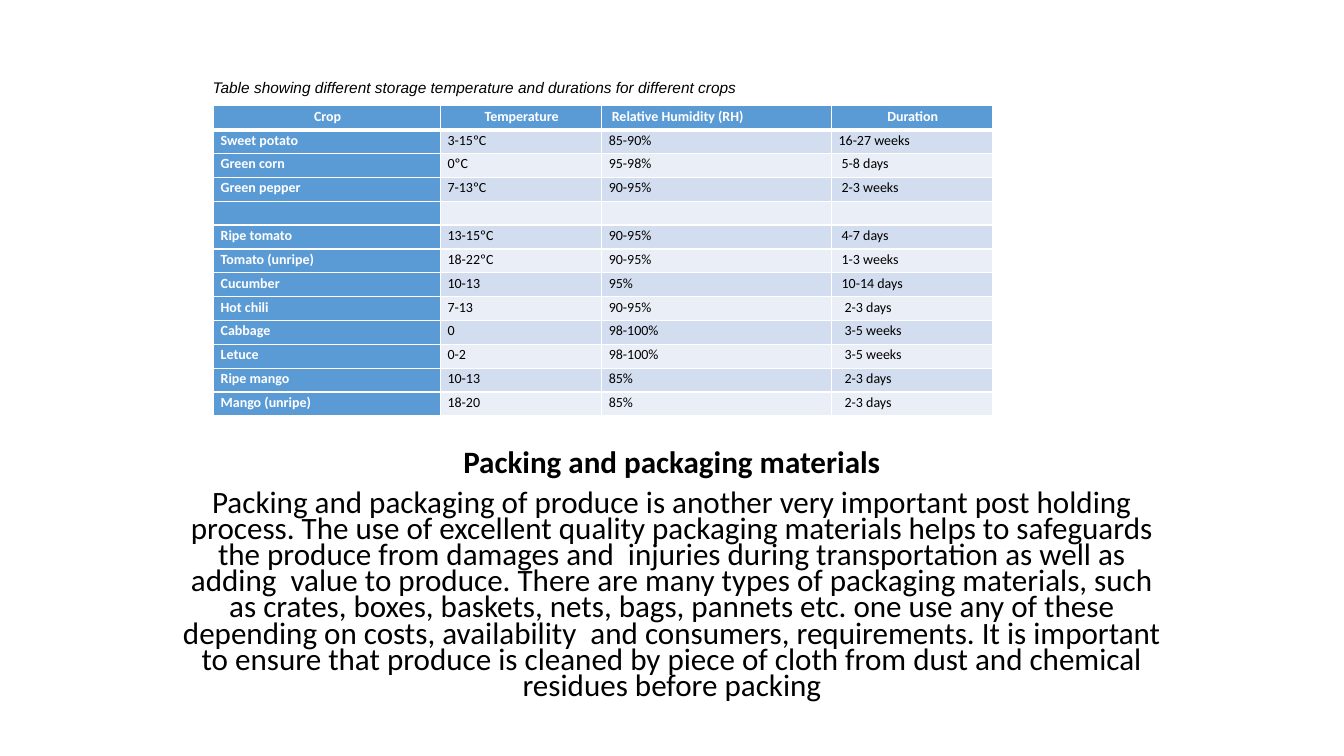
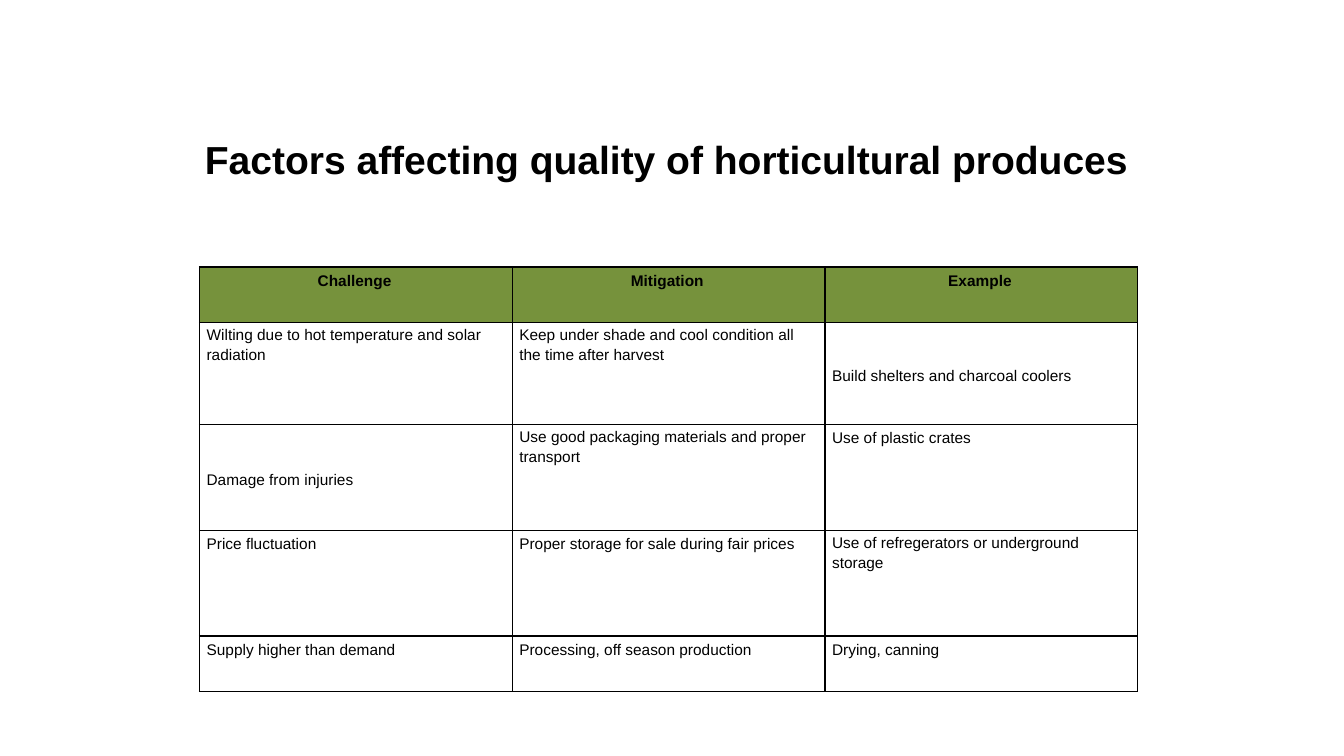
"""Build two slides on storing, packing and protecting horticultural produce."""
from lxml import etree
from pptx import Presentation
from pptx import util as u
from pptx.dml.color import RGBColor
from pptx.enum import text as t
from pptx.oxml.ns import qn

THEME = {
    "black": "000000", "white": "FFFFFF", "blue": "5B9BD5", "green": "76923C",
    "bands": ("D2DEEF", "EAEFF7"),
    "sans": "Arial", "body": "Calibri",
    "title": 27.9, "lead": 22.2, "label": 11, "gap": 12, "cell": 10,
}
LEFT, CENTER = t.PP_ALIGN.LEFT, t.PP_ALIGN.CENTER
TOP, MIDDLE, BOTTOM = t.MSO_ANCHOR.TOP, t.MSO_ANCHOR.MIDDLE, t.MSO_ANCHOR.BOTTOM

deck = Presentation()
deck.slide_width, deck.slide_height = u.Inches(13.33), u.Inches(7.5)
ACROSS, DOWN = deck.slide_width / 100, deck.slide_height / 100


def write(para, spans, font, color="black", layout=()):
    """Fill a paragraph with (text, size) spans sharing one font and layout."""
    for name, value in dict(layout).items():
        setattr(para, name, value)
    for words, size in spans:
        if not words:
            etree.SubElement(para._p, qn("a:endParaRPr"), sz=str(size * 100))
            continue
        span = para.add_run()
        span.text = words
        span.font.color.rgb = RGBColor.from_string(THEME[color])
        for name, value in {"size": u.Pt(size), **font}.items():
            setattr(span.font, name, value)


def draw_table(page, left, top, columns, rows):
    """Add a plain table whose place and sizes are percentages of the slide."""
    table = page.shapes.add_table(
        len(rows), len(columns), int(left * ACROSS), int(top * DOWN),
        int(sum(columns) * ACROSS), int(sum(rows) * DOWN)).table
    table.first_row = table.horz_banding = False
    for column, width in zip(table.columns, columns):
        column.width = int(width * ACROSS)
    for row, height in zip(table.rows, rows):
        row.height = int(height * DOWN)
    return table


storage_rows = [
    ("Crop", "Temperature", "Relative Humidity (RH)", "Duration"),
    ("Sweet potato", "3-15ºC", "85-90%", "16-27 weeks"),
    ("Green corn", "0ºC", "95-98%", "5-8 days"),
    ("Green pepper", "7-13ºC", "90-95%", "2-3 weeks"),
    ("", "", "", ""),
    ("Ripe tomato", "13-15ºC", "90-95%", "4-7 days"),
    ("Tomato (unripe)", "18-22ºC", "90-95%", "1-3 weeks"),
    ("Cucumber", "10-13", "95%", "10-14 days"),
    ("Hot chili", "7-13", "90-95%", "2-3 days"),
    ("Cabbage", "0", "98-100%", "3-5 weeks"),
    ("Letuce", "0-2", "98-100%", "3-5 weeks"),
    ("Ripe mango", "10-13", "85%", "2-3 days"),
    ("Mango (unripe)", "18-20", "85%", "2-3 days"),
]
factor_rows = [
    ("Challenge", "Mitigation", "Example"),
    ("Wilting due to hot temperature and solar radiation",
     "Keep under shade and cool condition all the time after harvest",
     "Build shelters and charcoal coolers"),
    ("Damage from injuries", "Use good packaging materials and proper transport",
     "Use of plastic crates"),
    ("Price fluctuation", "Proper storage for sale during fair prices",
     "Use of refregerators or underground storage"),
    ("Supply higher than demand", "Processing, off season production",
     "Drying, canning"),
]
packing_heading = "Packing and packaging materials"
packing_text = (
    "Packing and packaging of produce is another very important post holding process. "
    "The use of excellent quality packaging materials helps to safeguards the produce "
    "from damages and  injuries during transportation as well as adding  value to "
    "produce. There are many types of packaging materials, such as crates, boxes, "
    "baskets, nets, bags, pannets etc. one use any of these depending on costs, "
    "availability  and consumers, requirements. It is important to ensure that produce "
    "is cleaned by piece of cloth from dust and chemical residues before packing")

blank = deck.slide_layouts[6]
storage_page, factor_page = (deck.slides.add_slide(blank) for _ in range(2))

packing_layout = {"alignment": CENTER, "line_spacing": 0.7, "space_before": u.Pt(10)}
text_boxes = [
    (storage_page, (12.5, 59.2, 75, 36.13), {"vertical_anchor": TOP}, packing_layout,
     [(packing_heading, "lead", {"name": THEME["body"], "bold": True}),
      (packing_text, "lead", {"name": THEME["body"]})]),
    (storage_page, (15.08, 9.6, 70.28, 3.87), {"vertical_anchor": MIDDLE}, {},
     [("Table showing different storage temperature and durations for different crops",
       "label", {"name": THEME["sans"], "italic": True})]),
    (factor_page, (12.5, 7.33, 75, 29.6),
     {"vertical_anchor": BOTTOM, "margin_bottom": u.Inches(0.96),
      "margin_right": u.Inches(0.21)},
     {"alignment": CENTER, "line_spacing": 1.07},
     [("Factors affecting quality of horticultural produces", "title",
       {"name": THEME["sans"], "bold": True})]),
]
for page, (left, top, width, height), frame_format, layout, paragraphs in text_boxes:
    box = page.shapes.add_textbox(int(left * ACROSS), int(top * DOWN),
                                  int(width * ACROSS), int(height * DOWN))
    frame = box.text_frame
    for name, value in {"word_wrap": True, **frame_format}.items():
        setattr(frame, name, value)
    for index, (words, size, font) in enumerate(paragraphs):
        para = frame.add_paragraph() if index else frame.paragraphs[0]
        write(para, [(words, THEME[size])], font, layout=layout)

storage_table = draw_table(storage_page, 15.9, 14, (16.88, 12, 17.1, 12),
                           [3.16] * len(storage_rows))
factor_table = draw_table(factor_page, 14.85, 35.33, [23.27] * 3,
                          (7.33, 13.47, 14, 14, 7.33))
middle_cells = {(1, 2), (2, 0)}

tables = [(storage_table, storage_rows, "white", (0.07, 0.01, 0.06, 0)),
          (factor_table, factor_rows, "black", (0.07, 0.03, 0.05, 0))]
for table, rows, line_color, margins in tables:
    is_storage = table is storage_table
    for r, row in enumerate(rows):
        for c, words in enumerate(row):
            cell = table.cell(r, c)
            sides = ("margin_left", "margin_top", "margin_right", "margin_bottom")
            for side, inset in zip(sides, margins):
                setattr(cell, side, u.Inches(inset))

            thick_edge = {0: "lnB", 1: "lnT"}.get(r) if is_storage else None
            for edge in ("lnL", "lnR", "lnT", "lnB"):
                points = 3 if edge == thick_edge else 1
                line = etree.SubElement(cell._tc.get_or_add_tcPr(), qn("a:" + edge),
                                        w=str(u.Pt(points)))
                paint = etree.SubElement(line, qn("a:solidFill"))
                etree.SubElement(paint, qn("a:srgbClr"), val=THEME[line_color])

            heading = r == 0 or (is_storage and c == 0)
            fill = THEME["blue" if is_storage else "green"] if heading else None
            if is_storage and not heading:
                fill = THEME["bands"][(r - 1) % 2]
            if fill:
                cell.fill.solid()
                cell.fill.fore_color.rgb = RGBColor.from_string(fill)
            else:
                cell.fill.background()

            humidity_heading = is_storage and (r, c) == (0, 2)
            if humidity_heading:
                cell.margin_left += u.Inches(0.03)
            if is_storage and c == 3 and r > 1:
                cell.margin_left += u.Inches(0.03 if r < 8 else 0.06)
            if not is_storage and (r, c) in middle_cells:
                cell.vertical_anchor = MIDDLE

            centred = r == 0 and not humidity_heading
            spans = ([(words, THEME["cell"])] if is_storage
                     else [(words, THEME["label"]), (" ", THEME["gap"])])
            write(cell.text_frame.paragraphs[0], spans,
                  {"name": THEME["body" if is_storage else "sans"], "bold": heading},
                  "white" if is_storage and heading else "black",
                  {"alignment": CENTER if centred else LEFT, "line_spacing": 1.07})

deck.save("out.pptx")
